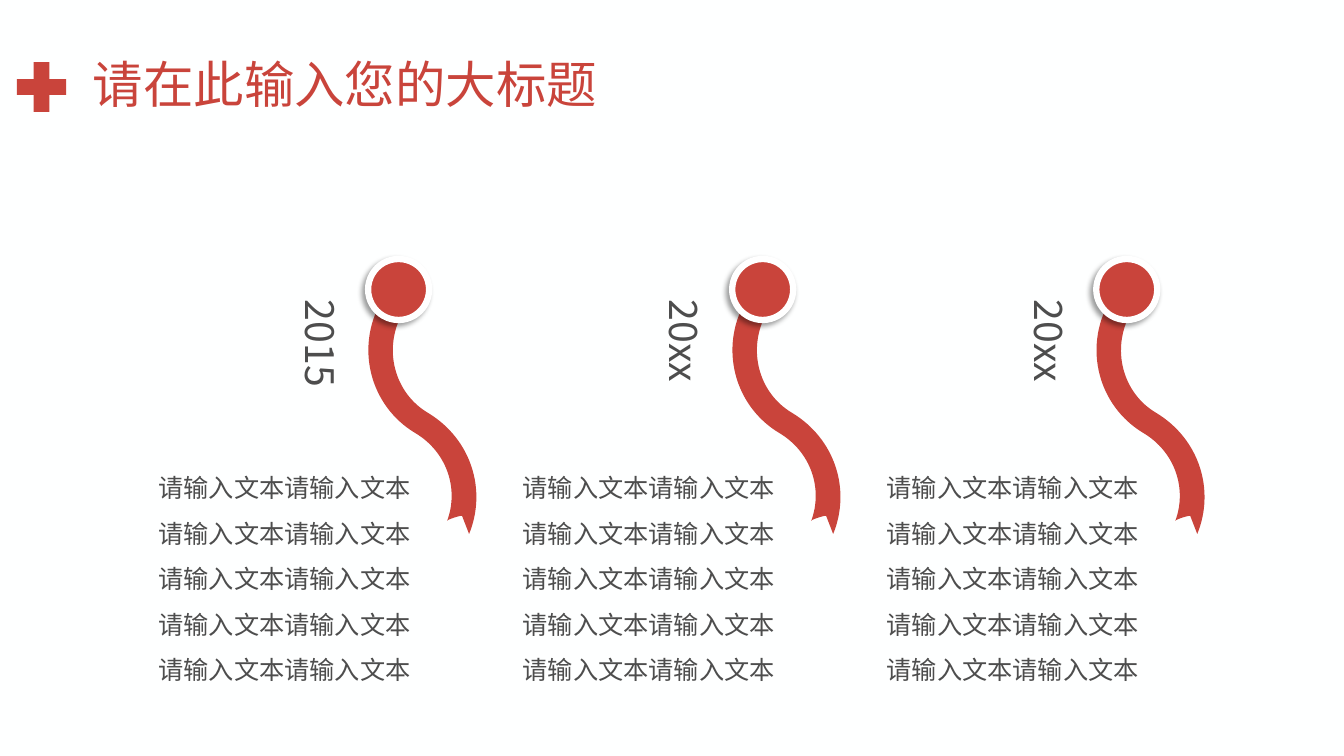
from lxml.etree import SubElement
from pptx import Presentation
from pptx.dml.color import RGBColor
from pptx.enum.shapes import MSO_SHAPE
from pptx.enum.text import MSO_ANCHOR, MSO_AUTO_SIZE, PP_ALIGN
from pptx.oxml import parse_xml
from pptx.oxml.ns import nsdecls, qn
from pptx.util import Inches, Pt

PX = 914400 / 100.8
FONT = "Noto Sans CJK SC"
RED = RGBColor(0xC9, 0x44, 0x3B)
GREY = RGBColor(0x4D, 0x4D, 0x4D)
WHITE = RGBColor(0xFF, 0xFF, 0xFF)
PAPER = RGBColor(0xFE, 0xFF, 0xFF)
COLUMN_PITCH = 364
YEARS = ["2015", "20xx", "20xx"]
BODY = "请输入文本" * 10
RIBBON_LEFT, RIBBON_TOP, RIBBON_RIGHT, RIBBON_BOTTOM = 368, 289, 476, 534
RIBBON = [
    ("moveTo", [(389, 289)]),
    ("lnTo", [(381, 302)]),
    ("cubicBezTo", [(355, 348), (370, 406), (415, 433)]),
    ("cubicBezTo", [(447, 452), (459, 489), (447, 521)]),
    ("cubicBezTo", [(446, 520), (461, 515), (462, 516)]),
    ("lnTo", [(469, 534)]),
    ("cubicBezTo", [(487, 490), (471, 439), (428, 413)]),
    ("cubicBezTo", [(394, 393), (383, 349), (402, 314)]),
    ("lnTo", [(406, 309)]),
    ("close", []),
]
SHADOW = (
    f'<a:effectLst {nsdecls("a")}><a:outerShdw blurRad="{Pt(4)}" dist="{Pt(3)}" '
    'dir="8100000" algn="tr" rotWithShape="0"><a:srgbClr val="000000">'
    '<a:alpha val="40000"/></a:srgbClr></a:outerShdw></a:effectLst>'
)


def px(*lengths):
    return [round(length * PX) for length in lengths]


def add_text(text, place, size, color, align=PP_ALIGN.LEFT, anchor=MSO_ANCHOR.TOP,
             spacing=1.0, vertical=False):
    box = slide.shapes.add_textbox(*px(*place))
    frame = box.text_frame
    frame.word_wrap = True
    frame.vertical_anchor = anchor
    if vertical:
        frame.auto_size = MSO_AUTO_SIZE.SHAPE_TO_FIT_TEXT
        box.element.txBody.find(qn("a:bodyPr")).set("vert", "eaVert")
    para = frame.paragraphs[0]
    para.alignment = align
    para.line_spacing = spacing
    span = para.add_run()
    span.text = text
    span.font.size = Pt(size)
    span.font.color.rgb = color
    span.font.name = FONT
    SubElement(span.font._element, qn("a:ea")).set("typeface", FONT)


deck = Presentation()
deck.slide_width, deck.slide_height = Inches(13.33), Inches(7.5)
slide = deck.slides.add_slide(deck.slide_layouts[6])

for kind, place, color in [
    (MSO_SHAPE.RECTANGLE, (0, 0, 1344, 756), PAPER),
    (MSO_SHAPE.MATH_PLUS, (8, 53, 67, 68), RED),
]:
    shape = slide.shapes.add_shape(kind, *px(*place))
    shape.shadow.inherit = False
    shape.fill.solid()
    shape.fill.fore_color.rgb = color
    shape.line.fill.background()

add_text("请在此输入您的大标题", (83, 40, 1177, 94), 36, RED,
         anchor=MSO_ANCHOR.MIDDLE, spacing=0.9)

for column, year in enumerate(YEARS):
    shift = column * COLUMN_PITCH
    left, top = RIBBON_LEFT + shift, RIBBON_TOP
    right, bottom = RIBBON_RIGHT + shift, RIBBON_BOTTOM
    builder = slide.shapes.build_freeform(*px(left, top), scale=1.0)
    builder.add_line_segments([px(right, top), px(right, bottom)])
    ribbon = builder.convert_to_shape()
    outline = next(ribbon.element.iter(qn("a:path")))
    for corner in list(outline):
        outline.remove(corner)
    for command, points in RIBBON:
        step = SubElement(outline, qn(f"a:{command}"))
        for x, y in points:
            point = SubElement(step, qn("a:pt"))
            for axis, value in zip("xy", px(x - RIBBON_LEFT, y - RIBBON_TOP)):
                point.set(axis, str(value))
    ribbon.shadow.inherit = False
    ribbon.fill.solid()
    ribbon.fill.fore_color.rgb = RED
    ribbon.line.fill.background()

    add_text(year, (283 + shift, 290, 67, 138), 28, GREY,
             align=PP_ALIGN.JUSTIFY, vertical=True)

    dot = slide.shapes.add_shape(MSO_SHAPE.OVAL, *px(368 + shift, 259, 61, 61))
    dot.fill.solid()
    dot.fill.fore_color.rgb = RED
    dot.line.color.rgb = WHITE
    dot.line.width = Pt(4.5)
    dot.element.spPr.append(parse_xml(SHADOW))

    add_text(BODY, (140 + shift, 452, 289, 238), 18, GREY,
             align=PP_ALIGN.CENTER, anchor=MSO_ANCHOR.MIDDLE, spacing=1.5)

deck.save("out.pptx")
